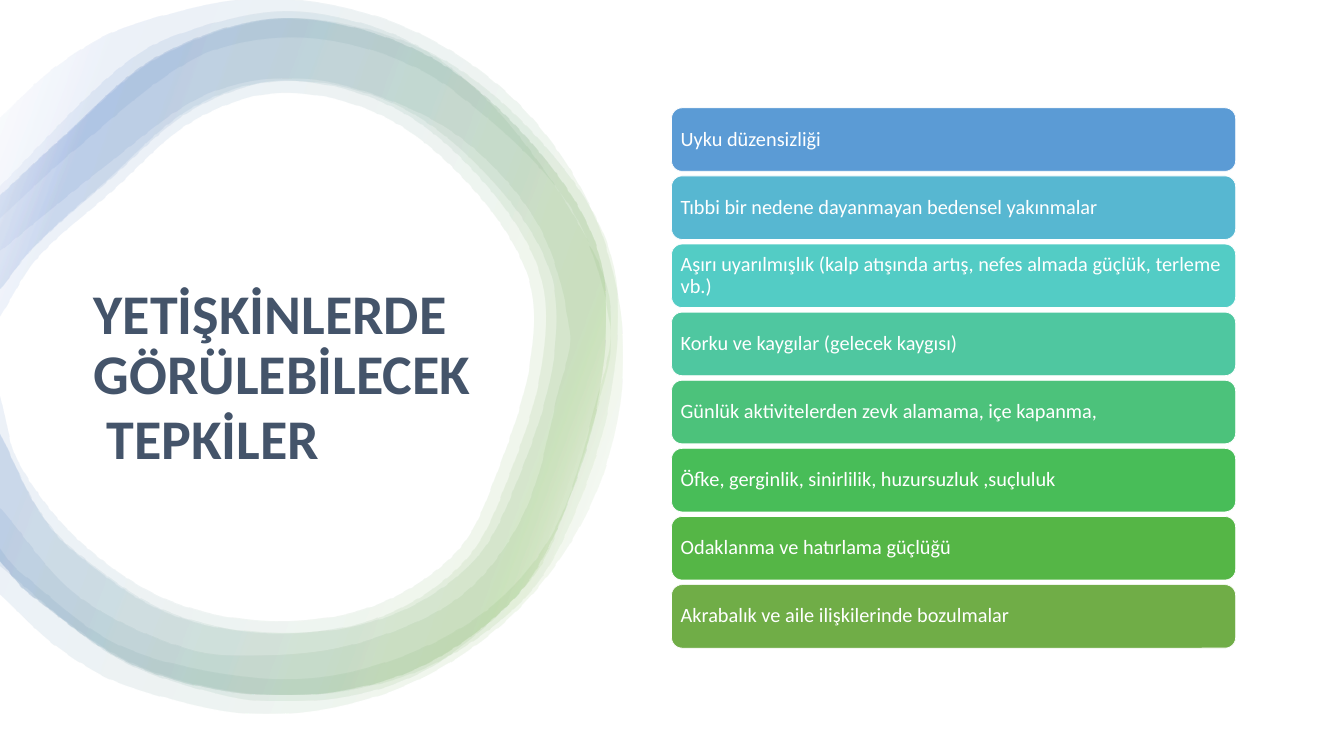
from dataclasses import dataclass
from math import dist

from pptx import Presentation
from pptx.dml.color import RGBColor
from pptx.enum.shapes import MSO_SHAPE
from pptx.enum.text import MSO_ANCHOR, MSO_AUTO_SIZE, PP_ALIGN
from pptx.oxml import parse_xml
from pptx.oxml.ns import nsdecls
from pptx.util import Pt

PX = 9144  # EMU per px, 100 px to the inch
WIDTH, HEIGHT = 2666, 1500
ROUND = MSO_SHAPE.ROUNDED_RECTANGLE
MIDDLE, LEFT, NO_FIT = MSO_ANCHOR.MIDDLE, PP_ALIGN.LEFT, MSO_AUTO_SIZE.NONE

WHITE = RGBColor(0xFF, 0xFF, 0xFF)
SLATE = RGBColor(0x44, 0x54, 0x6A)
GREEN = RGBColor(0x70, 0xAD, 0x47)
BLUE = RGBColor(0x44, 0x72, 0xC4)
STOPS = [(2, WHITE), (16, GREEN), (85, BLUE), (100, WHITE)]
ANGLE, ALPHA = 200, 10

TITLE_FONT = {"name": "Calibri", "size": Pt(80), "bold": True}
CARD_FONT = {"name": "Calibri", "size": Pt(29), "bold": False}
TITLE_PARA = {"alignment": LEFT, "line_spacing": 0.9, "space_before": Pt(0),
              "space_after": Pt(6)}
CARD_PARA = {"alignment": LEFT, "line_spacing": 0.9}

CARD_LEFT, CARD_WIDE, CARD_HIGH = 1332, 1119, 126
FIRST_TOP, LAST_TOP = 214, 1160
INSET = 12

Points = list[tuple[int, int]]


@dataclass
class Ring:
    """Band cut by the slide's left edge: outer runs down, inner runs up."""
    outer: Points
    inner: Points
    stretch: float = 1.0


@dataclass
class Card:
    text: str
    color: RGBColor


WAVE_OUT = [
    (0, 368), (217, 150), (333, 75), (549, 23), (746, 55), (905, 144),
    (1053, 303), (1187, 525), (1211, 657), (1187, 792), (1114, 1022),
    (1054, 1144), (885, 1301), (732, 1370), (551, 1390), (404, 1368),
    (221, 1298), (0, 1122)]
WAVE_IN = [
    (0, 1006), (152, 1179), (361, 1282), (506, 1298), (707, 1274), (912, 1180),
    (1037, 1016), (1108, 763), (1128, 657), (1065, 445), (909, 271), (706, 176),
    (544, 156), (393, 194), (210, 327), (0, 497)]
BAND_OUT = [
    (0, 386), (117, 278), (319, 110), (572, 36), (855, 105), (1076, 284),
    (1211, 505), (1212, 772), (1134, 1029), (1031, 1194), (820, 1333),
    (557, 1377), (283, 1323), (58, 1176), (0, 1112)]
BAND_IN = [
    (0, 859), (72, 1003), (145, 1089), (334, 1212), (557, 1254), (774, 1219),
    (942, 1107), (1028, 944), (1094, 729), (1092, 544), (982, 365), (796, 213),
    (572, 159), (386, 214), (206, 365), (62, 494), (0, 573)]
THICK_IN = [
    (0, 784), (38, 917), (161, 1072), (342, 1189), (556, 1230), (761, 1197),
    (924, 1090), (1003, 938), (1070, 721), (1068, 552), (962, 381), (783, 234),
    (571, 183), (390, 239), (221, 382), (74, 511), (0, 626)]
DISC_OUT = [
    (0, 233), (115, 129), (255, 52), (526, -2), (797, 52), (1027, 206),
    (1181, 436), (1235, 707), (1181, 978), (1027, 1208), (797, 1362),
    (526, 1416), (255, 1362), (115, 1285), (0, 1180)]
DISC_IN = [
    (0, 1088), (34, 1130), (239, 1281), (514, 1344), (732, 1323), (955, 1217),
    (1098, 1051), (1188, 770), (1209, 643), (1125, 404), (900, 182), (735, 100),
    (554, 76), (381, 119), (157, 290), (0, 433)]

SLIM = 0.98
RINGS = [
    Ring(WAVE_OUT, WAVE_IN),
    Ring(BAND_OUT, BAND_IN),
    Ring(BAND_OUT, THICK_IN, SLIM),
    Ring(BAND_OUT, BAND_IN, SLIM),
    Ring(DISC_OUT, DISC_IN),
]
CARDS = [
    Card("Uyku düzensizliği", RGBColor(0x5B, 0x9B, 0xD5)),
    Card("Tıbbi bir nedene dayanmayan bedensel yakınmalar", RGBColor(0x57, 0xB7, 0xD1)),
    Card("Aşırı uyarılmışlık (kalp atışında artış, nefes almada güçlük, terleme vb.)",
         RGBColor(0x53, 0xCC, 0xC5)),
    Card("Korku ve kaygılar (gelecek kaygısı)", RGBColor(0x4F, 0xC7, 0xA0)),
    Card("Günlük aktivitelerden zevk alamama, içe kapanma,", RGBColor(0x4C, 0xC2, 0x7B)),
    Card("Öfke, gerginlik, sinirlilik, huzursuzluk ,suçluluk", RGBColor(0x48, 0xBD, 0x58)),
    Card("Odaklanma ve hatırlama güçlüğü", RGBColor(0x55, 0xB6, 0x46)),
    Card("Akrabalık ve aile ilişkilerinde bozulmalar", GREEN),
]
TITLE = ["YETİŞKİNLERDE GÖRÜLEBİLECEK", " TEPKİLER"]


def px(count: float) -> int:
    return round(count * PX)


def bend(points: Points) -> list[Points]:
    """Give two handles and an end for each smooth span between the points."""
    slopes = []
    for i in range(len(points)):
        near = points[max(i - 1, 0):i + 2]
        length = sum(dist(a, b) for a, b in zip(near, near[1:]))
        slopes.append([(b - a) / length for a, b in zip(near[0], near[-1])])
    spans = []
    for a, b, start, end in zip(points, points[1:], slopes, slopes[1:]):
        reach = dist(a, b) / 3
        spans.append([
            (round(a[0] + start[0] * reach), round(a[1] + start[1] * reach)),
            (round(b[0] - end[0] * reach), round(b[1] - end[1] * reach)), b])
    return spans


def fade(shape) -> None:
    """Give the shape the see-through gradient."""
    stops = "".join(
        f'<a:gs pos="{place * 1000}"><a:srgbClr val="{color}">'
        f'<a:alpha val="{ALPHA * 1000}"/></a:srgbClr></a:gs>' for place, color in STOPS)
    shape.fill.background()
    props = shape._element.spPr
    blank = props.find("{*}noFill")
    props.replace(blank, parse_xml(
        f'<a:gradFill {nsdecls("a")} rotWithShape="1"><a:gsLst>{stops}</a:gsLst>'
        f'<a:lin ang="{ANGLE * 60000}" scaled="0"/></a:gradFill>'))


def draw_ring(slide, ring: Ring) -> None:
    outer, inner = ([(round(x * ring.stretch), y) for x, y in half]
                    for half in (ring.outer, ring.inner))
    edge = outer + inner
    pen = slide.shapes.build_freeform(*edge[0], scale=PX)
    pen.add_line_segments(edge[1:], close=True)
    shape = pen.convert_to_shape()
    shape.shadow.inherit = False
    shape.line.fill.background()
    fade(shape)
    top = min(y for _, y in edge)
    lines = shape._element.spPr.findall(".//{*}lnTo")
    join = len(outer) - 1
    curved = lines[:join] + lines[join + 1:]
    for line, span in zip(curved, bend(outer) + bend(inner)):
        dots = "".join(f'<a:pt x="{x}" y="{y - top}"/>' for x, y in span)
        line.getparent().replace(line, parse_xml(
            f'<a:cubicBezTo {nsdecls("a")}>{dots}</a:cubicBezTo>'))


def write(frame, lines: list[str], para: dict, font: dict, color: RGBColor) -> None:
    frame.word_wrap = True
    frame.auto_size = NO_FIT
    frame.vertical_anchor = MIDDLE
    for i, line in enumerate(lines):
        item = frame.add_paragraph() if i else frame.paragraphs[0]
        run = item.add_run()
        run.text = line
        run.font.color.rgb = color
        for target, values in ((item, para), (run.font, font)):
            for key, value in values.items():
                setattr(target, key, value)


def draw_card(slide, card: Card, top: float) -> None:
    shape = slide.shapes.add_shape(
        ROUND, px(CARD_LEFT), px(top), px(CARD_WIDE), px(CARD_HIGH))
    shape.shadow.inherit = False
    shape.fill.solid()
    shape.fill.fore_color.rgb = card.color
    shape.line.color.rgb = WHITE
    shape.line.width = Pt(1)
    frame = shape.text_frame
    for side in ("left", "right", "top", "bottom"):
        setattr(frame, f"margin_{side}", px(INSET))
    write(frame, [card.text], CARD_PARA, CARD_FONT, WHITE)


def main() -> None:
    deck = Presentation()
    deck.slide_width, deck.slide_height = px(WIDTH), px(HEIGHT)
    slide = deck.slides.add_slide(deck.slide_layouts[5])
    for ring in RINGS:
        draw_ring(slide, ring)
    title = slide.shapes.title
    place = {"left": 176, "top": 443, "width": 800, "height": 617}
    for key, value in place.items():
        setattr(title, key, px(value))
    write(title.text_frame, TITLE, TITLE_PARA, TITLE_FONT, SLATE)
    pitch = (LAST_TOP - FIRST_TOP) / (len(CARDS) - 1)
    for i, card in enumerate(CARDS):
        draw_card(slide, card, FIRST_TOP + i * pitch)
    deck.save("out.pptx")


if __name__ == "__main__":
    main()
